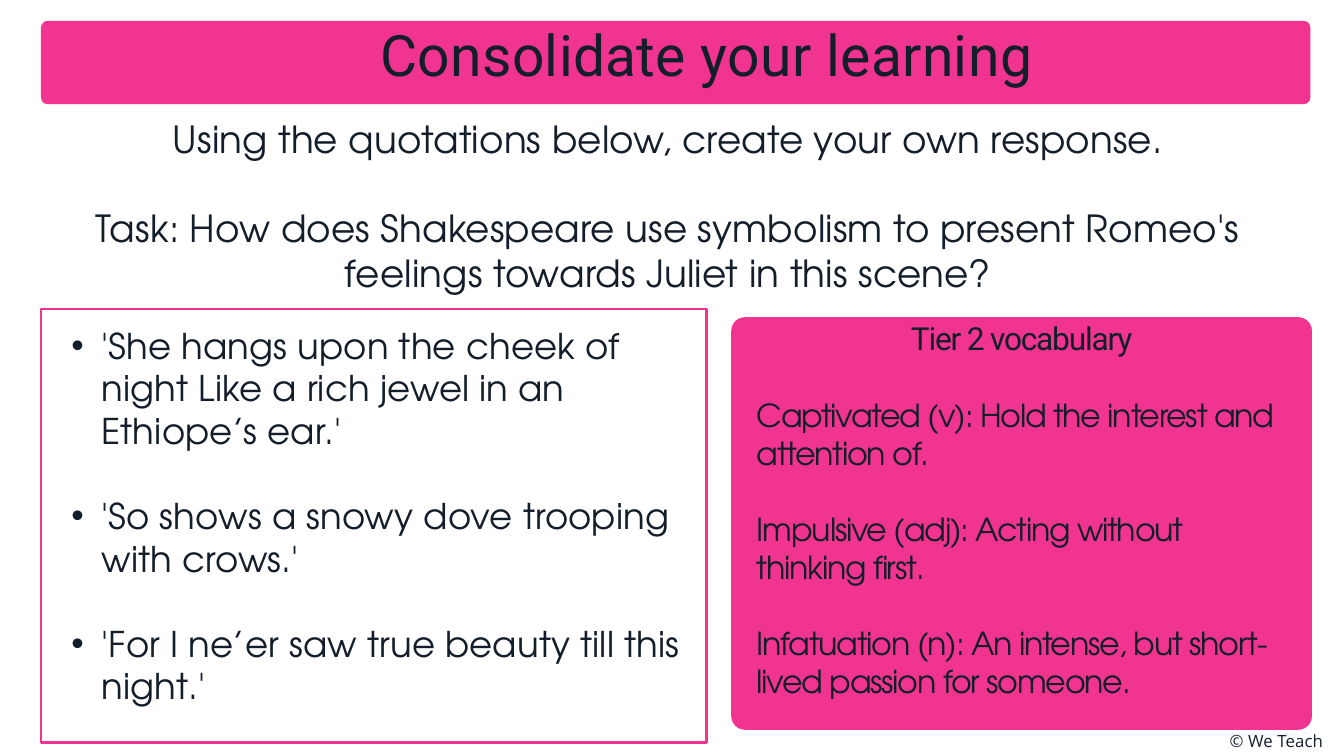
from dataclasses import dataclass

from lxml import etree
from pptx import Presentation
from pptx.dml.color import RGBColor
from pptx.enum.shapes import MSO_SHAPE
from pptx.enum.text import MSO_ANCHOR, MSO_AUTO_SIZE, PP_ALIGN
from pptx.oxml.ns import qn
from pptx.util import Cm, Pt

RECTANGLE = MSO_SHAPE.RECTANGLE
ROUNDED = MSO_SHAPE.ROUNDED_RECTANGLE
LEFT, CENTER = PP_ALIGN.LEFT, PP_ALIGN.CENTER
TOP = MSO_ANCHOR.TOP
FIXED_SIZE = MSO_AUTO_SIZE.NONE
TITLE_ONLY = 5


@dataclass(frozen=True)
class TextStyle:
    font: str
    size: float
    line: float
    tracking: float
    align: PP_ALIGN = LEFT


@dataclass(frozen=True)
class Theme:
    pink: RGBColor = RGBColor(0xF0, 0x34, 0x8F)
    ink: RGBColor = RGBColor(0x14, 0x1E, 0x2B)
    title: TextStyle = TextStyle("Roboto", 61.1, 73.3, 0.4, CENTER)
    task: TextStyle = TextStyle("TeX Gyre Adventor", 40, 48, 0.2, CENTER)
    quote: TextStyle = TextStyle("TeX Gyre Adventor", 38, 45.6, 0.2)
    vocab_heading: TextStyle = TextStyle("Roboto", 34, 40.8, -1.3, CENTER)
    vocab: TextStyle = TextStyle("TeX Gyre Adventor", 34, 40.8, -1.3)
    footer: TextStyle = TextStyle("Open Sans", 18, 21.6, 0.1)


THEME = Theme()

TASK = [
    "Using the quotations below, create your own response.",
    "Task: How does Shakespeare use symbolism to present Romeo's feelings "
    "towards Juliet in this scene?",
]
QUOTATIONS = [
    "'She hangs upon the cheek of night Like a rich jewel in an Ethiope’s ear.'",
    "'So shows a snowy dove trooping with crows.'",
    "'For I ne’er saw true beauty till this night.'",
]
VOCABULARY = [
    "Captivated (v): Hold the interest and attention of.",
    "Impulsive (adj): Acting without thinking first.",
    "Infatuation (n): An intense, but short-lived passion for someone.",
]


def add_panel(slide, kind, left, top, width, height, radius=0, filled=True):
    """Add a pink panel, either filled or only outlined."""
    panel = slide.shapes.add_shape(kind, Cm(left), Cm(top), Cm(width), Cm(height))
    panel.shadow.inherit = False
    if radius:
        panel.adjustments[0] = radius / min(width, height)
    if filled:
        panel.fill.solid()
        panel.fill.fore_color.rgb = THEME.pink
        panel.line.fill.background()
    else:
        panel.fill.background()
        panel.line.color.rgb = THEME.pink
        panel.line.width = Pt(3)


def prepare_frame(frame):
    frame.margin_left = frame.margin_right = 0
    frame.margin_top = frame.margin_bottom = 0
    frame.word_wrap = True
    frame.auto_size = FIXED_SIZE
    frame.vertical_anchor = TOP


def add_bullet(paragraph):
    properties = paragraph._p.get_or_add_pPr()
    properties.set("marL", str(Cm(2.29)))
    properties.set("indent", str(Cm(-1.14)))
    etree.SubElement(properties, qn("a:buFont"), typeface="Arial")
    etree.SubElement(properties, qn("a:buChar"), char="•")


def write_paragraph(paragraph, text, style, gap=False, bullet=False):
    """Write one paragraph; a gap leaves one line's height above it."""
    paragraph.text = text
    if bullet:
        add_bullet(paragraph)
    paragraph.alignment = style.align
    paragraph.line_spacing = Pt(style.line)
    paragraph.space_before = Pt(style.line if gap else 0)
    for run in paragraph.runs:
        run.font.name = style.font
        run.font.size = Pt(style.size)
        run.font.color.rgb = THEME.ink
        run.font._element.set("spc", str(round(style.tracking * 100)))


def add_text(slide, left, top, width, height, texts, styles, bullet=False):
    box = slide.shapes.add_textbox(Cm(left), Cm(top), Cm(width), Cm(height))
    frame = box.text_frame
    prepare_frame(frame)
    for index, (text, style) in enumerate(zip(texts, styles)):
        paragraph = frame.add_paragraph() if index else frame.paragraphs[0]
        write_paragraph(paragraph, text, style, gap=index > 0, bullet=bullet)


def place_title(slide, text):
    title = slide.shapes.title
    title.left, title.top = Cm(10.41), Cm(0.74)
    title.width, title.height = Cm(32.61), Cm(2.92)
    prepare_frame(title.text_frame)
    write_paragraph(title.text_frame.paragraphs[0], text, THEME.title)
    # Bring the title in front of its banner
    slide.shapes._spTree.append(title._element)


def main():
    deck = Presentation()
    deck.slide_width, deck.slide_height = Cm(50.8), Cm(28.58)
    slide = deck.slides.add_slide(deck.slide_layouts[TITLE_ONLY])

    # Title banner
    add_panel(slide, ROUNDED, 1.55, 0.79, 47.98, 3.15, radius=0.25)
    place_title(slide, "Consolidate your learning")

    # Task
    add_text(slide, 2.84, 4.39, 44.86, 6.81, TASK, [THEME.task] * len(TASK))

    # Quotations
    add_panel(slide, RECTANGLE, 1.55, 11.68, 25.17, 16.38, filled=False)
    add_text(slide, 1.55, 12.24, 24.97, 14.68, QUOTATIONS,
             [THEME.quote] * len(QUOTATIONS), bullet=True)

    # Vocabulary
    add_panel(slide, ROUNDED, 27.64, 11.99, 21.95, 15.6, radius=0.52)
    add_text(slide, 28.6, 12.07, 20.04, 14.48, ["Tier 2 vocabulary"] + VOCABULARY,
             [THEME.vocab_heading] + [THEME.vocab] * len(VOCABULARY))

    # Copyright line
    add_text(slide, 46.48, 27.61, 4.32, 0.86, ["© We Teach"], [THEME.footer])

    deck.save("out.pptx")


if __name__ == "__main__":
    main()
